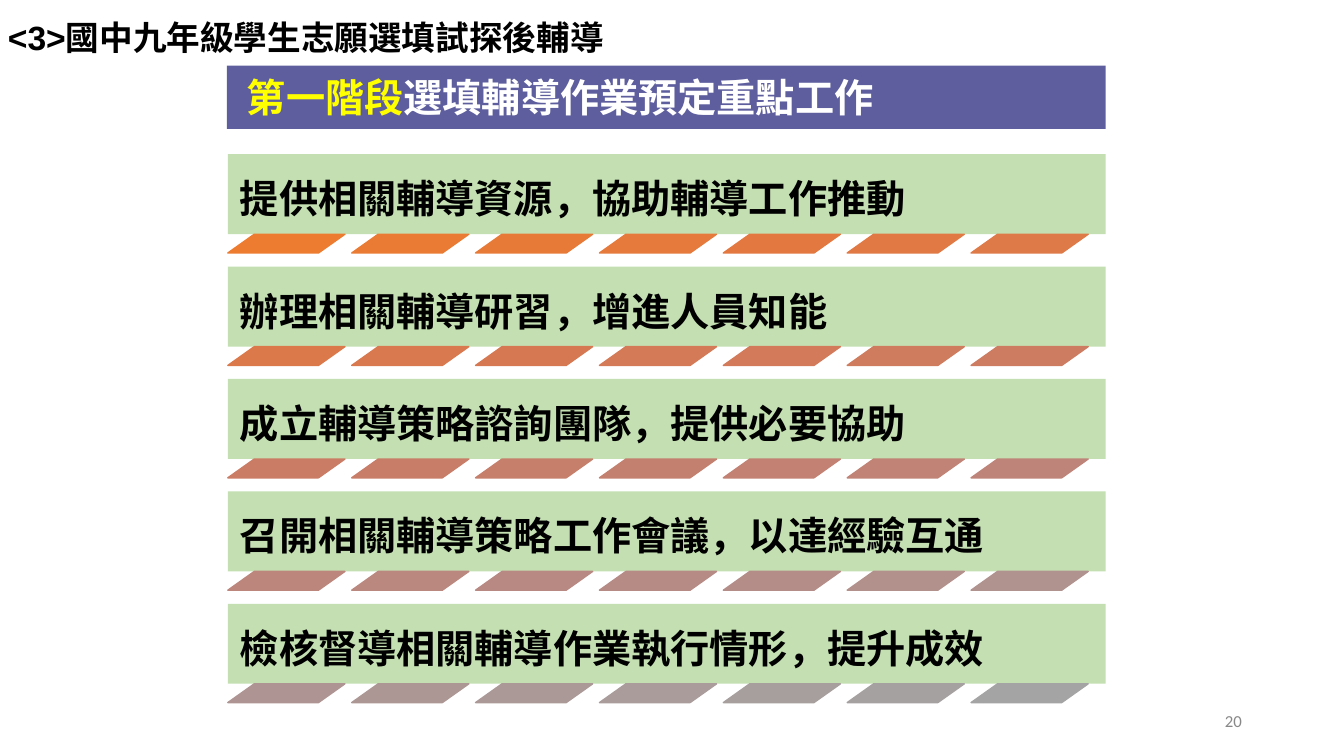
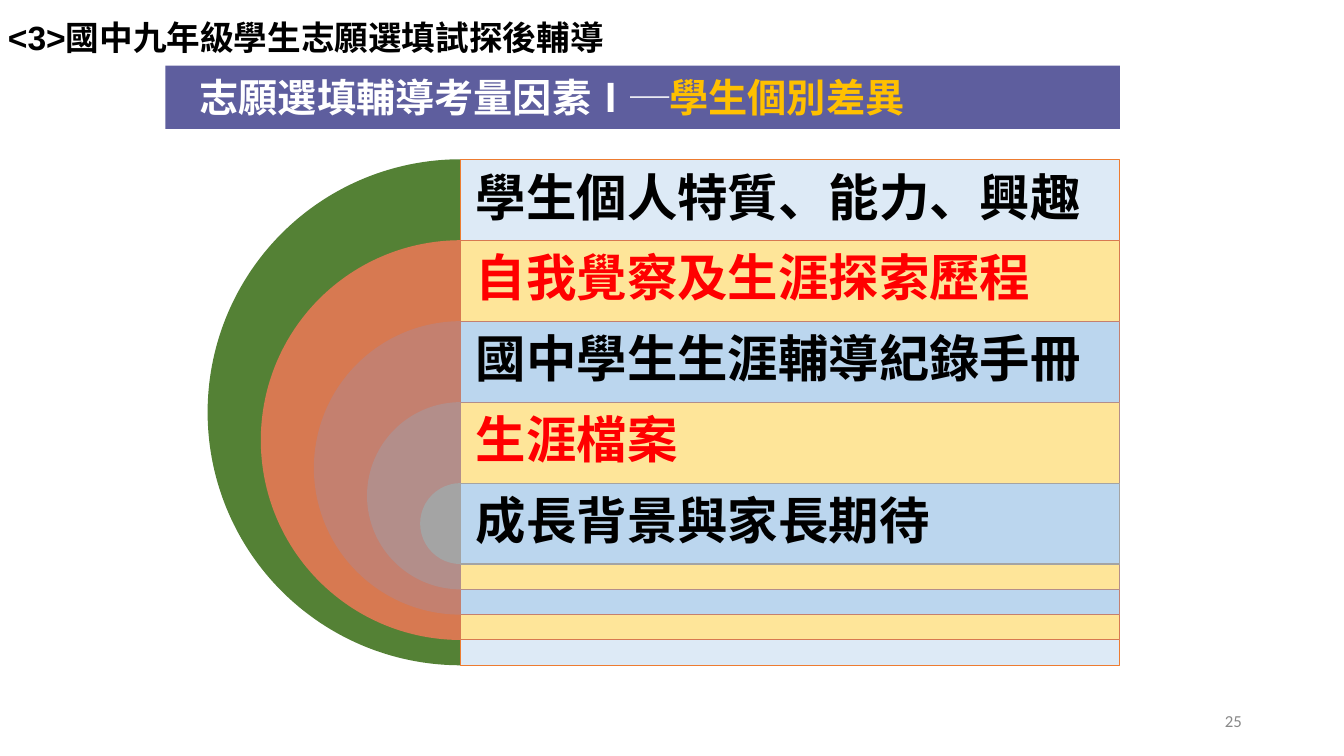
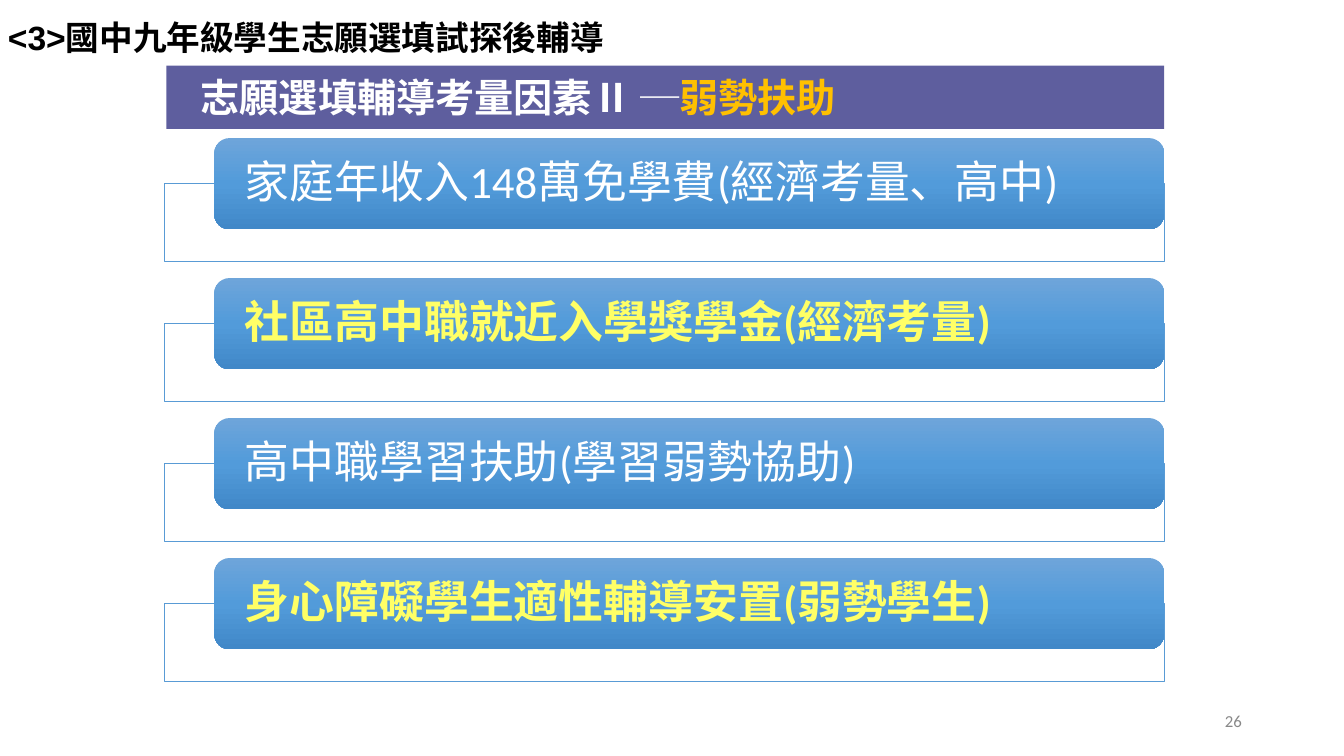
from colorsys import hls_to_rgb
from copy import deepcopy
from dataclasses import dataclass

from lxml.etree import SubElement
from pptx import Presentation
from pptx.dml.color import RGBColor
from pptx.enum.shapes import MSO_SHAPE
from pptx.enum.text import MSO_ANCHOR, MSO_AUTO_SIZE, PP_ALIGN
from pptx.oxml.ns import qn
from pptx.util import Inches, Pt

SLIDE_WIDTH, SLIDE_HEIGHT = 13.33, 7.5
COLUMNS, ROWS = 40, 30
COLUMNS_PER_ROW = 0.75
CJK_FONT = "Noto Sans CJK TC"
TOPIC = "<3>國中九年級學生志願選填試探後輔導"

COLORS = {
    "black": "000000", "white": "FFFFFF", "red": "FF0000", "gray": "888888",
    "band": "000066", "yellow": "FFFF00", "gold": "FFC000", "lemon": "FFFF66",
    "task": "C4E0B2", "outer": "548135", "pale": "DDEAF6", "cream": "FEE599",
    "sky": "BBD6EE", "frame": "599BD5",
    "tab_top": "6EA5DA", "tab_middle": "529BDA", "tab_bottom": "4188C8",
}


@dataclass
class Box:
    left: float
    top: float
    width: float
    height: float

    def portion(self, x, y, width, height):
        return Box(self.left + x * self.width, self.top + y * self.height,
                   width * self.width, height * self.height)

    def rows(self, count, gap):
        height = (self.height - gap * (count - 1)) / count
        return [Box(self.left, self.top + i * (height + gap), self.width, height)
                for i in range(count)]

    def columns(self, count, gap):
        width = (self.width - gap * (count - 1)) / count
        return [Box(self.left + i * (width + gap), self.top, width, self.height)
                for i in range(count)]

    def place(self):
        return (Inches(self.left * SLIDE_WIDTH / COLUMNS),
                Inches(self.top * SLIDE_HEIGHT / ROWS),
                Inches(self.width * SLIDE_WIDTH / COLUMNS),
                Inches(self.height * SLIDE_HEIGHT / ROWS))


TOPIC_BOX = Box(-0.06, 0.48, 21.9, 2)
NUMBER_BOX = Box(28.26, 27.8, 9, 1.6)


def rgb(color):
    return RGBColor.from_string(COLORS.get(color, color))


def ramp(share):
    channels = hls_to_rgb(24 / 360 * (1 - share), 0.56 + 0.083 * share,
                          0.84 * (1 - share))
    return "".join(f"{round(channel * 255):02X}" for channel in channels)


def paint(shape, color, opacity=100):
    shape.fill.solid()
    shape.fill.fore_color.rgb = rgb(color)
    if opacity < 100:
        tone = shape._element.spPr.find(qn("a:solidFill"))[0]
        SubElement(tone, qn("a:alpha")).set("val", str(opacity * 1000))


def draw(slide, kind, box, color, line=None, line_width=0.75, opacity=100):
    shape = slide.shapes.add_shape(kind, *box.place())
    shape.shadow.inherit = False
    paint(shape, color, opacity)
    if line:
        shape.line.color.rgb = rgb(line)
        shape.line.width = Pt(line_width)
    else:
        shape.line.fill.background()
    return shape


def write(shape, runs, size, font="Arial", bold=True, align=PP_ALIGN.LEFT,
          anchor=MSO_ANCHOR.MIDDLE, insets=(0.1, 0.05, 0.1, 0.05), spacing=1.0):
    frame = shape.text_frame
    frame.word_wrap = True
    frame.auto_size = MSO_AUTO_SIZE.NONE
    frame.vertical_anchor = anchor
    (frame.margin_left, frame.margin_top,
     frame.margin_right, frame.margin_bottom) = map(Inches, insets)
    paragraph = frame.paragraphs[0]
    paragraph.alignment = align
    paragraph.line_spacing = spacing
    paragraph.font.size = Pt(size)
    paragraph.font.bold = bold
    paragraph.font.name = font
    defaults = paragraph._p.pPr.find(qn("a:defRPr"))
    SubElement(defaults, qn("a:ea")).set("typeface", CJK_FONT)
    for text, color in runs:
        run = paragraph.add_run()
        run.text = text
        run.font.color.rgb = rgb(color)


def add_page(deck, number, band, title_runs, indent):
    slide = deck.slides.add_slide(deck.slide_layouts.get_by_name("Title Only"))
    title = slide.shapes.title
    title.left, title.top, title.width, title.height = band.place()
    paint(title, "band", 63)
    write(title, title_runs, 28, CJK_FONT, insets=(indent, 0, 0, 0))
    topic = slide.shapes.add_textbox(*TOPIC_BOX.place())
    write(topic, [(TOPIC, "black")], 24, anchor=MSO_ANCHOR.TOP)
    page_number = slide.shapes.add_textbox(*NUMBER_BOX.place())
    write(page_number, [(number, "gray")], 12, "Calibri", False, PP_ALIGN.RIGHT)
    return slide


def add_tasks(slide, box, tasks, dash_count=7):
    last_dash = len(tasks) * dash_count - 1
    for i, (task, row) in enumerate(zip(tasks, box.rows(len(tasks), 0.54))):
        bar = draw(slide, MSO_SHAPE.RECTANGLE, row.portion(0, 0, 1, 0.81), "task")
        write(bar, [(task, "black")], 28, CJK_FONT, anchor=MSO_ANCHOR.BOTTOM,
              insets=(0.12,) * 4, spacing=0.9)
        strip = row.portion(0, 0.81, 0.98, 0.19)
        for j, cell in enumerate(strip.columns(dash_count, 0.2)):
            color = ramp((i * dash_count + j) / last_dash)
            dash = draw(slide, MSO_SHAPE.PARALLELOGRAM, cell, color, color, 1)
            dash.adjustments[0] = 1.41


def add_nested_factors(slide, box, factors):
    row_height = 0.16 * box.height
    center = box.left + box.height * COLUMNS_PER_ROW / 2
    for i, (factor, text_color, fill) in enumerate(factors):
        tone = ramp(i / (len(factors) - 1))
        top = box.top + i * row_height
        height = box.height * (1 - 0.21 * i)
        diameter = height * COLUMNS_PER_ROW
        half_disc = draw(slide, MSO_SHAPE.PIE,
                         Box(center - diameter / 2, top, diameter, height),
                         tone if i else "outer")
        half_disc.adjustments[0] = 54
        half_disc.adjustments[1] = 162
        panel = Box(center, top, box.left + box.width - center, height)
        draw(slide, MSO_SHAPE.RECTANGLE, panel, fill, tone)
        label = slide.shapes.add_textbox(
            *Box(panel.left, top, panel.width, row_height).place())
        write(label, [(factor, text_color)], 36, insets=(0.15, 0.05, 0.15, 0.05),
              spacing=0.9)


def shade_tab(tab):
    tab.fill.gradient()
    tab.fill.gradient_angle = 270
    stop_list = tab._element.spPr.find(qn("a:gradFill")).find(qn("a:gsLst"))
    stop_list.insert(1, deepcopy(stop_list[0]))
    shades = ("tab_top", "tab_middle", "tab_bottom")
    for i, (stop, shade) in enumerate(zip(tab.fill.gradient_stops, shades)):
        stop.position = i / 2
        stop.color.rgb = rgb(shade)


def add_supports(slide, box, supports):
    for i, (support, row) in enumerate(zip(supports, box.rows(len(supports), 0.66))):
        draw(slide, MSO_SHAPE.RECTANGLE, row.portion(0, 0.37, 1, 0.63), "white",
             "frame", opacity=90)
        tab = draw(slide, MSO_SHAPE.ROUNDED_RECTANGLE,
                   row.portion(0.05, 0, 0.95, 0.74), "tab_middle")
        shade_tab(tab)
        highlighted = i % 2 == 1
        write(tab, [(support, "lemon" if highlighted else "white")], 32, "Calibri",
              highlighted, insets=(0.26, 0, 0.26, 0), spacing=0.9)


def main():
    deck = Presentation()
    deck.slide_width, deck.slide_height = Inches(SLIDE_WIDTH), Inches(SLIDE_HEIGHT)

    tasks_page = add_page(
        deck, "20", Box(6.75, 2.6, 26.16, 2.52),
        [("第一階段", "yellow"), ("選填輔導作業預定重點工作", "white")], 0.2)
    add_tasks(tasks_page, Box(6.78, 6.12, 26.13, 21.76), [
        "提供相關輔導資源，協助輔導工作推動",
        "辦理相關輔導研習，增進人員知能",
        "成立輔導策略諮詢團隊，提供必要協助",
        "召開相關輔導策略工作會議，以達經驗互通",
        "檢核督導相關輔導作業執行情形，提升成效",
    ])

    factors_page = add_page(
        deck, "25", Box(4.92, 2.6, 28.41, 2.52),
        [("志願選填輔導考量因素Ⅰ─", "white"), ("學生個別差異", "gold")], 0.34)
    add_nested_factors(factors_page, Box(6.18, 6.32, 27.15, 20.08), [
        ("學生個人特質、能力、興趣", "black", "pale"),
        ("自我覺察及生涯探索歷程", "red", "cream"),
        ("國中學生生涯輔導紀錄手冊", "black", "sky"),
        ("生涯檔案", "red", "cream"),
        ("成長背景與家長期待", "black", "sky"),
    ])

    supports_page = add_page(
        deck, "26", Box(4.95, 2.6, 29.7, 2.52),
        [("志願選填輔導考量因素Ⅱ ─", "white"), ("弱勢扶助", "gold")], 0.34)
    add_supports(supports_page, Box(4.89, 5.48, 29.76, 21.56), [
        "家庭年收入148萬免學費(經濟考量、高中)",
        "社區高中職就近入學獎學金(經濟考量)",
        "高中職學習扶助(學習弱勢協助)",
        "身心障礙學生適性輔導安置(弱勢學生)",
    ])

    deck.save("out.pptx")


if __name__ == "__main__":
    main()
